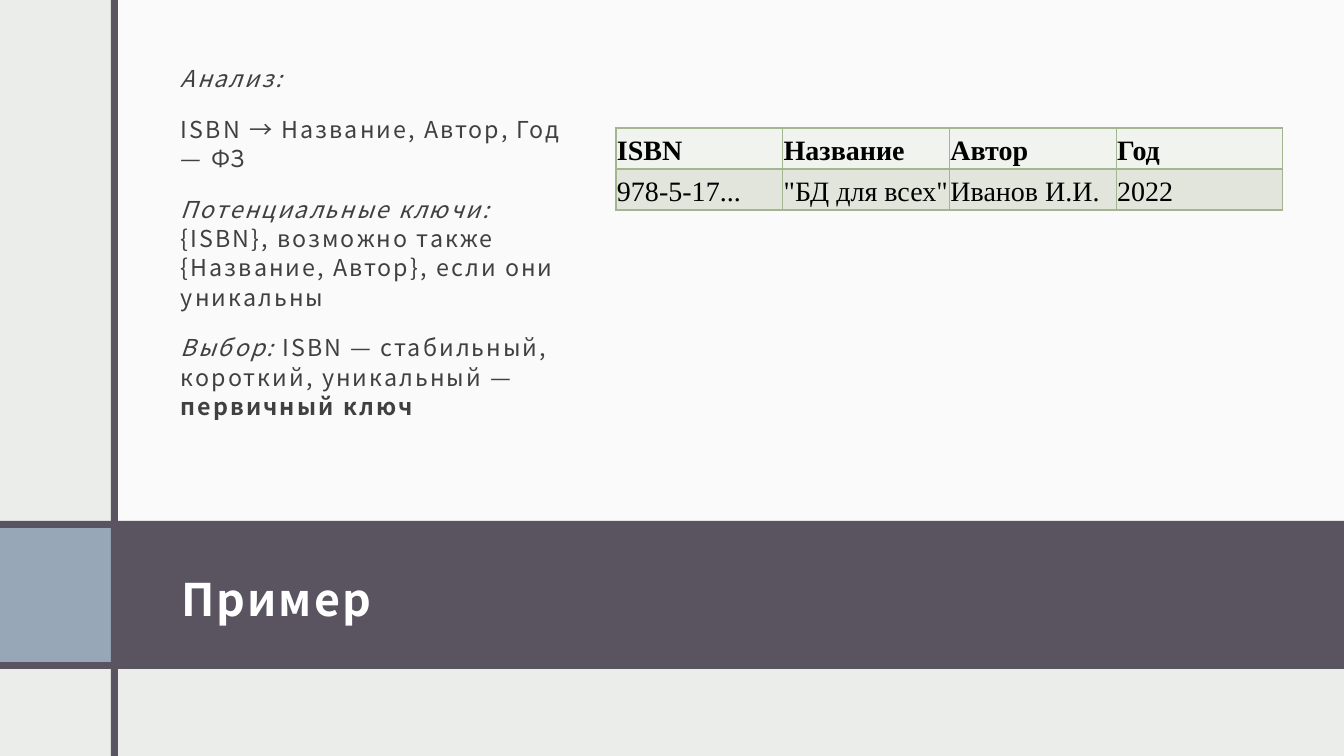
from dataclasses import dataclass

from lxml import etree
from pptx import Presentation
from pptx import util as u
from pptx.dml.color import RGBColor
from pptx.enum import shapes, text
from pptx.oxml.ns import qn

PX = 914400 / 100.8
SLIDE_W, SLIDE_H = 1344, 756


@dataclass(frozen=True)
class Theme:
    background: str = "EBEDEB"
    panel: str = "FFFFFF"
    band: str = "595460"
    accent: str = "97A7B8"
    title_ink: str = "FFFFFF"
    body_ink: str = "404040"
    table_ink: str = "000000"
    header_fill: str = "F0F3EE"
    row_fill: str = "E1E5DC"
    border: str = "A5B592"
    font: str = "Noto Sans CJK JP"
    table_font: str = "Times New Roman"
    title_size: float = 32
    body_size: float = 16.6
    table_size: float = 20


THEME = Theme()

TITLE = "Пример"
# Each paragraph is a list of (wording, style) pairs: "i" italic, "b" bold.
ANALYSIS = [
    [("Анализ:", "i")],
    [("ISBN → Название, Автор, Год — ФЗ", "")],
    [("Потенциальные ключи: ", "i"),
     ("{ISBN}, возможно также {Название, Автор}, если они уникальны", "")],
    [("Выбор: ", "i"), ("ISBN — стабильный, короткий, уникальный — ", ""),
     ("первичный ключ", "b")],
]
BOOKS = [
    ["ISBN", "Название", "Автор", "Год"],
    ["978-5-17...", '"БД для всех"', "Иванов И.И.", "2022"],
]


def px(*lengths):
    return [u.Emu(round(length * PX)) for length in lengths]


def rgb(colour):
    return RGBColor.from_string(colour)


def style(paragraph, name, size, colour, bold=None):
    font = paragraph.font
    font.name, font.size, font.bold = name, u.Pt(size), bold
    font.color.rgb = rgb(colour)


def track(paragraph):
    """Spread the letters of a styled paragraph by 1.5 points."""
    paragraph._p.pPr.find(qn("a:defRPr")).set("spc", "150")


def add_block(slide, box, colour, opacity=100):
    block = slide.shapes.add_shape(shapes.MSO_SHAPE.RECTANGLE, *px(*box))
    block.shadow.inherit = False
    block.fill.solid()
    block.fill.fore_color.rgb = rgb(colour)
    block.line.fill.background()
    if opacity < 100:
        tint = block._element.spPr.find(qn("a:solidFill"))[0]
        etree.SubElement(tint, qn("a:alpha"), val=str(opacity * 1000))


def add_frame(slide, box, top_inset, anchor):
    frame = slide.shapes.add_textbox(*px(*box)).text_frame
    frame.word_wrap = True
    frame.vertical_anchor = anchor
    frame.margin_left, frame.margin_right = px(12, 12)
    frame.margin_top, frame.margin_bottom = px(top_inset, 10)
    return frame


def add_backdrop(slide, box):
    """Crossing dark bars over a pale panel, with an accent square."""
    left, top, width, height = box
    column, bar, band_top, band_height = 111, 7, top + 521, 148
    panel_left = left + column + bar // 2
    slide.background.fill.solid()
    slide.background.fill.fore_color.rgb = rgb(THEME.background)
    add_block(slide, (panel_left, top, left + width - panel_left, band_top - top),
              THEME.panel, opacity=75)
    add_block(slide, (left, band_top, width, band_height), THEME.band)
    add_block(slide, (left, band_top + bar, column, band_height - 2 * bar),
              THEME.accent)
    add_block(slide, (left + column, top, bar, height), THEME.band)


def add_title(slide, box):
    title = add_frame(slide, box, 20, text.MSO_ANCHOR.MIDDLE).paragraphs[0]
    title.text = TITLE
    style(title, THEME.font, THEME.title_size, THEME.title_ink, bold=True)
    track(title)


def add_analysis(slide, box):
    frame = add_frame(slide, box, 12, text.MSO_ANCHOR.TOP)
    for index, parts in enumerate(ANALYSIS):
        paragraph = frame.add_paragraph() if index else frame.paragraphs[0]
        paragraph.line_spacing = 1.05
        paragraph.space_before, paragraph.space_after = u.Pt(9.3), u.Pt(6)
        style(paragraph, THEME.font, THEME.body_size, THEME.body_ink)
        track(paragraph)
        for wording, emphasis in parts:
            run = paragraph.add_run()
            run.text = wording
            run.font.italic = emphasis == "i"
            run.font.bold = emphasis == "b"


def add_borders(cell):
    properties = cell._tc.get_or_add_tcPr()
    for index, side in enumerate(("lnL", "lnR", "lnT", "lnB")):
        line = etree.Element(qn(f"a:{side}"), w=str(u.Pt(1)))
        fill = etree.SubElement(line, qn("a:solidFill"))
        etree.SubElement(fill, qn("a:srgbClr"), val=THEME.border)
        properties.insert(index, line)


def fill_cell(cell, wording, header):
    cell.fill.solid()
    cell.fill.fore_color.rgb = rgb(THEME.header_fill if header else THEME.row_fill)
    cell.vertical_anchor = text.MSO_ANCHOR.MIDDLE
    cell.margin_left, cell.margin_right, cell.margin_top, cell.margin_bottom = px(
        1, 1, 1, 1)
    add_borders(cell)
    paragraph = cell.text_frame.paragraphs[0]
    paragraph.text = wording
    paragraph.alignment = text.PP_ALIGN.JUSTIFY
    paragraph.line_spacing = 1.15
    paragraph.space_after = u.Pt(8)
    style(paragraph, THEME.table_font, THEME.table_size, THEME.table_ink, bold=header)


def add_books(slide, box):
    books = slide.shapes.add_table(len(BOOKS), len(BOOKS[0]), *px(*box)).table
    for row, record in enumerate(BOOKS):
        for column, wording in enumerate(record):
            fill_cell(books.cell(row, column), wording, header=row == 0)


def main():
    deck = Presentation()
    deck.slide_width, deck.slide_height = px(SLIDE_W, SLIDE_H)
    slide = deck.slides.add_slide(deck.slide_layouts[6])
    add_backdrop(slide, (0, 0, SLIDE_W, SLIDE_H))
    add_title(slide, (169, 537, 1104, 114))
    add_analysis(slide, (169, 51, 407, 426))
    add_books(slide, (616, 128, 667, 82))
    deck.save("out.pptx")


if __name__ == "__main__":
    main()
